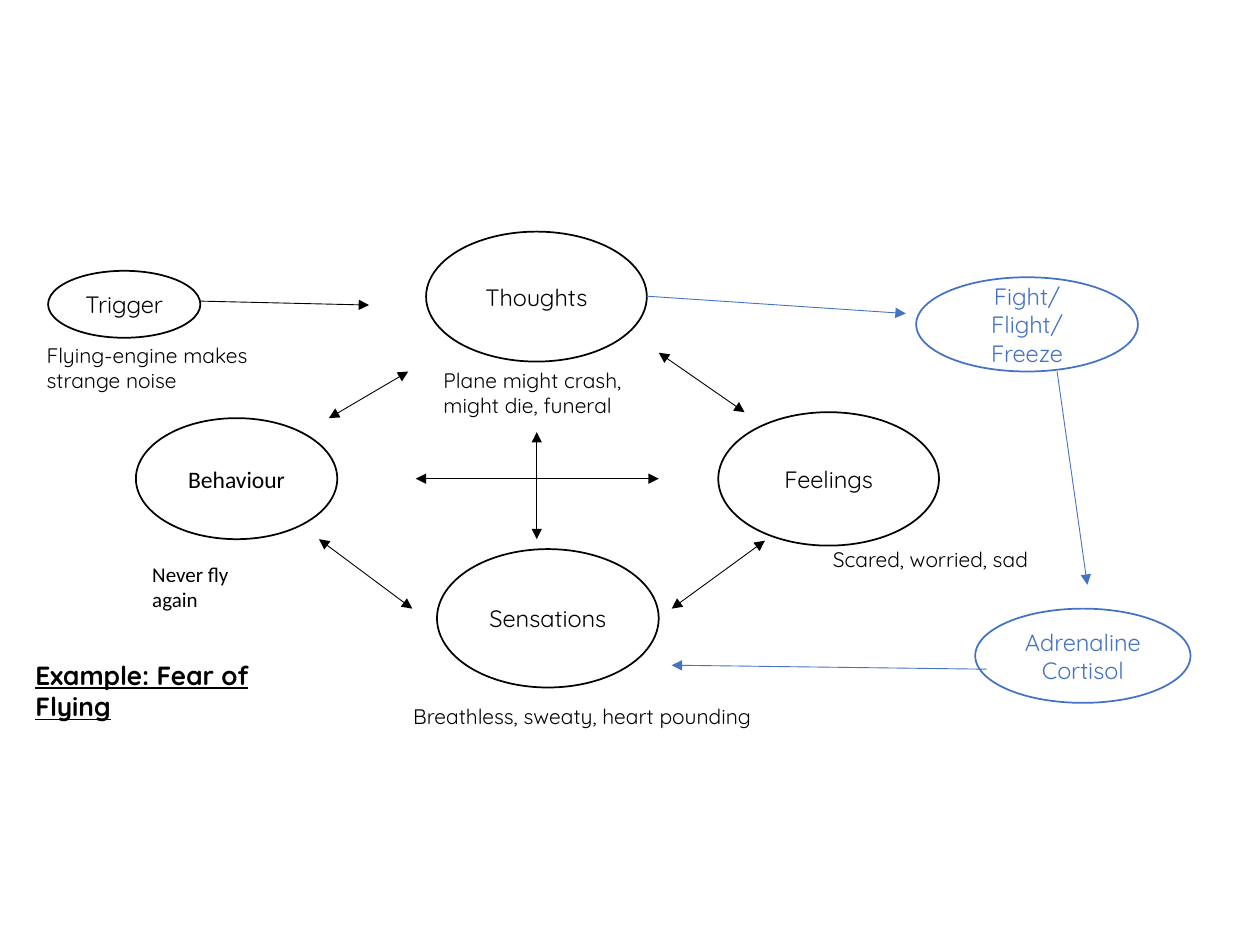
from dataclasses import dataclass

import pptx
import pptx.dml.color
import pptx.enum.shapes
import pptx.enum.text
import pptx.oxml
import pptx.oxml.ns
import pptx.util
from pptx.util import Cm

COLORS = {"ink": "000000", "blue": "4472C4", "paper": "FFFFFF"}
FONT = "Quicksand"
ALIGN = pptx.enum.text.PP_ALIGN
ANCHOR = pptx.enum.text.MSO_ANCHOR


@dataclass
class Label:
    """A box of text, with lengths in centimetres."""
    text: str
    left: float
    top: float
    width: float
    height: float
    color: str = "ink"
    font: str = FONT


@dataclass
class Arrow:
    """A line from (x1, y1) to (x2, y2) in centimetres."""
    x1: float
    y1: float
    x2: float
    y2: float
    both: bool = True
    color: str = "ink"


OVALS = [
    Label("Trigger", 0.97, 5.46, 3.07, 1.35),
    Label("Thoughts", 8.59, 4.67, 4.45, 2.62),
    Label("Feelings", 14.48, 8.31, 4.45, 2.69),
    Label("Sensations", 8.81, 11.07, 4.47, 2.79),
    Label("Behaviour", 2.74, 8.43, 4.06, 2.44, font="Calibri"),
    Label("Fight/Flight/Freeze", 18.47, 5.59, 4.47, 1.9, "blue"),
    Label("Adrenaline\nCortisol", 19.66, 12.27, 4.34, 1.9, "blue"),
]

ARROWS = [
    # Cycle between the four parts
    Arrow(10.82, 8.71, 10.82, 10.87),
    Arrow(8.38, 9.65, 13.28, 9.65),
    Arrow(6.63, 8.43, 8.23, 7.49),
    Arrow(13.28, 7.11, 15.01, 8.31),
    Arrow(13.54, 12.27, 15.42, 10.9),
    Arrow(6.43, 10.87, 8.31, 12.27),
    # Trigger to thoughts
    Arrow(4.04, 6.07, 7.44, 6.15, both=False),
    # Stress response
    Arrow(13.03, 5.97, 18.26, 6.32, False, "blue"),
    Arrow(21.31, 7.49, 21.92, 11.79, False, "blue"),
    Arrow(19.89, 13.49, 13.54, 13.41, False, "blue"),
]

NOTES = [
    Label("Flying-engine makes strange noise", 0.69, 6.78, 5.31, 1.27),
    Label("Plane might crash, might die, funeral", 8.69, 7.29, 4.29, 1.8),
    Label("Scared, worried, sad", 16.54, 10.9, 4.78, 0.76),
    Label("Breathless, sweaty, heart pounding", 8.08, 14.05, 8.1, 0.76),
    Label("Never fly again", 2.82, 11.2, 2.95, 1.27, font="Calibri"),
]

TITLE = Label("Example: Fear of Flying", 0.46, 13.16, 6.43, 0.89)


def tint(name: str) -> pptx.dml.color.RGBColor:
    return pptx.dml.color.RGBColor.from_string(COLORS[name])


def area(label: Label) -> tuple:
    return Cm(label.left), Cm(label.top), Cm(label.width), Cm(label.height)


def write(shape, label: Label, size: float, align, anchor) -> None:
    frame = shape.text_frame
    frame.text = label.text
    frame.word_wrap = True
    frame.auto_size = pptx.enum.text.MSO_AUTO_SIZE.NONE
    frame.vertical_anchor = anchor
    for para in frame.paragraphs:
        para.alignment = align
        para.font.name = label.font
        para.font.size = pptx.util.Pt(size)
        para.font.color.rgb = tint(label.color)


def add_oval(slide, label: Label) -> None:
    kind = pptx.enum.shapes.MSO_SHAPE.OVAL
    oval = slide.shapes.add_shape(kind, *area(label))
    oval.shadow.inherit = False
    oval.fill.solid()
    oval.fill.fore_color.rgb = tint("paper")
    oval.line.color.rgb = tint(label.color)
    oval.line.width = pptx.util.Pt(1)
    write(oval, label, 13.5, ALIGN.CENTER, ANCHOR.MIDDLE)


def add_arrow(slide, arrow: Arrow) -> None:
    kind = pptx.enum.shapes.MSO_CONNECTOR.STRAIGHT
    ends = (Cm(v) for v in (arrow.x1, arrow.y1, arrow.x2, arrow.y2))
    line = slide.shapes.add_connector(kind, *ends)
    line.line.color.rgb = tint(arrow.color)
    line.line.width = pptx.util.Pt(0.5)
    # Arrowheads and no shadow
    props = line._element.spPr
    stroke = line.line._get_or_add_ln()
    for tag in ("a:headEnd", "a:tailEnd") if arrow.both else ("a:tailEnd",):
        head = pptx.oxml.xmlchemy.OxmlElement(tag)
        head.set("type", "triangle")
        stroke.append(head)
    props.append(pptx.oxml.xmlchemy.OxmlElement("a:effectLst"))


def add_note(slide, label: Label) -> None:
    box = slide.shapes.add_textbox(*area(label))
    write(box, label, 12, ALIGN.LEFT, ANCHOR.TOP)


def set_title(slide, label: Label) -> None:
    title = slide.shapes.title
    title.left, title.top, title.width, title.height = area(label)
    write(title, label, 15, ALIGN.LEFT, ANCHOR.TOP)
    font = title.text_frame.paragraphs[0].font
    font.bold = True
    font.underline = True


def main() -> None:
    deck = pptx.Presentation()
    deck.slide_width, deck.slide_height = Cm(25.4), Cm(19.05)
    slide = deck.slides.add_slide(deck.slide_layouts[5])
    for oval in OVALS:
        add_oval(slide, oval)
    for arrow in ARROWS:
        add_arrow(slide, arrow)
    for note in NOTES:
        add_note(slide, note)
    set_title(slide, TITLE)
    deck.save("out.pptx")


if __name__ == "__main__":
    main()
